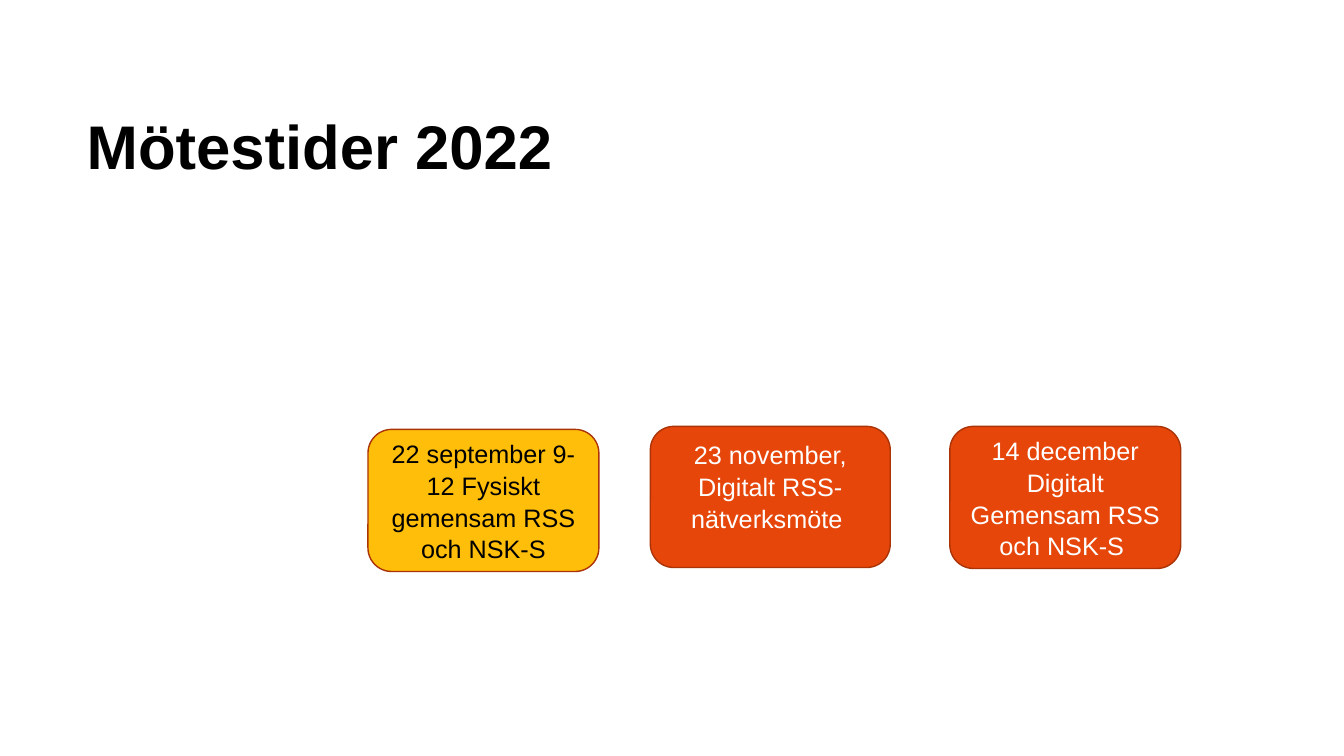
"""Build the slide with the meeting dates for 2022."""
from pptx import Presentation, util as u
from pptx.dml import color
from pptx.enum import shapes, text

WIDTH, HEIGHT = u.Inches(13.33), u.Inches(7.5)
COLOURS = {
    "white": "FFFFFF",
    "black": "000000",
    "yellow": "FFBE0A",
    "orange": "E6460A",
    "edge": "AA3407",
}
MIDDLE, TOP = text.MSO_ANCHOR.MIDDLE, text.MSO_ANCHOR.TOP
MEETINGS = [
    ("22 september 9-12 Fysiskt gemensam RSS och NSK-S",
     (27.38, 56.8, 17.18, 18.8), "yellow", "black", MIDDLE),
    ("23 november, Digitalt RSS- nätverksmöte ",
     (48.39, 56.4, 17.85, 18.67), "orange", "white", TOP),
    ("14 december Digitalt Gemensam RSS och NSK-S ",
     (70.67, 56.4, 17.18, 18.8), "orange", "white", MIDDLE),
]


def colour(name):
    """Return the named colour."""
    return color.RGBColor.from_string(COLOURS[name])


def place(shares):
    """Turn percentages of the slide into left, top, width and height."""
    sides = (WIDTH, HEIGHT, WIDTH, HEIGHT)
    return [round(side * share / 100) for side, share in zip(sides, shares)]


def format_text(frame, size, name, spacing, align, bold=False):
    """Format every paragraph and run of a text frame."""
    frame.word_wrap = True
    for para in frame.paragraphs:
        para.alignment = align
        para.line_spacing = spacing
        for span in para.runs:
            span.font.name = "Arial"
            span.font.size = u.Pt(size)
            span.font.bold = bold
            span.font.color.rgb = colour(name)


def add_title(page, words):
    """Fill and format the title placeholder."""
    title = page.shapes.title
    title.left, title.top, title.width, title.height = place((5.7, 14.27, 78.84, 16.27))
    title.text_frame.text = words
    title.text_frame.vertical_anchor = TOP
    format_text(title.text_frame, 44, "black", 0.95, text.PP_ALIGN.LEFT, bold=True)


def add_meeting(page, words, shares, fill, ink, anchor):
    """Add one rounded box with a meeting date."""
    box = page.shapes.add_shape(shapes.MSO_SHAPE.ROUNDED_RECTANGLE, *place(shares))
    box.shadow.inherit = False
    box.fill.solid()
    box.fill.fore_color.rgb = colour(fill)
    box.line.color.rgb = colour("edge")
    box.line.width = u.Pt(1)
    box.text_frame.text = words
    box.text_frame.vertical_anchor = anchor
    format_text(box.text_frame, 18, ink, 1.05, text.PP_ALIGN.CENTER)


def main():
    """Create and save the deck."""
    deck = Presentation()
    deck.slide_width, deck.slide_height = WIDTH, HEIGHT
    page = deck.slides.add_slide(deck.slide_layouts.get_by_name("Title Only"))
    add_title(page, "Mötestider 2022")
    for meeting in MEETINGS:
        add_meeting(page, *meeting)
    deck.save("out.pptx")


if __name__ == "__main__":
    main()
